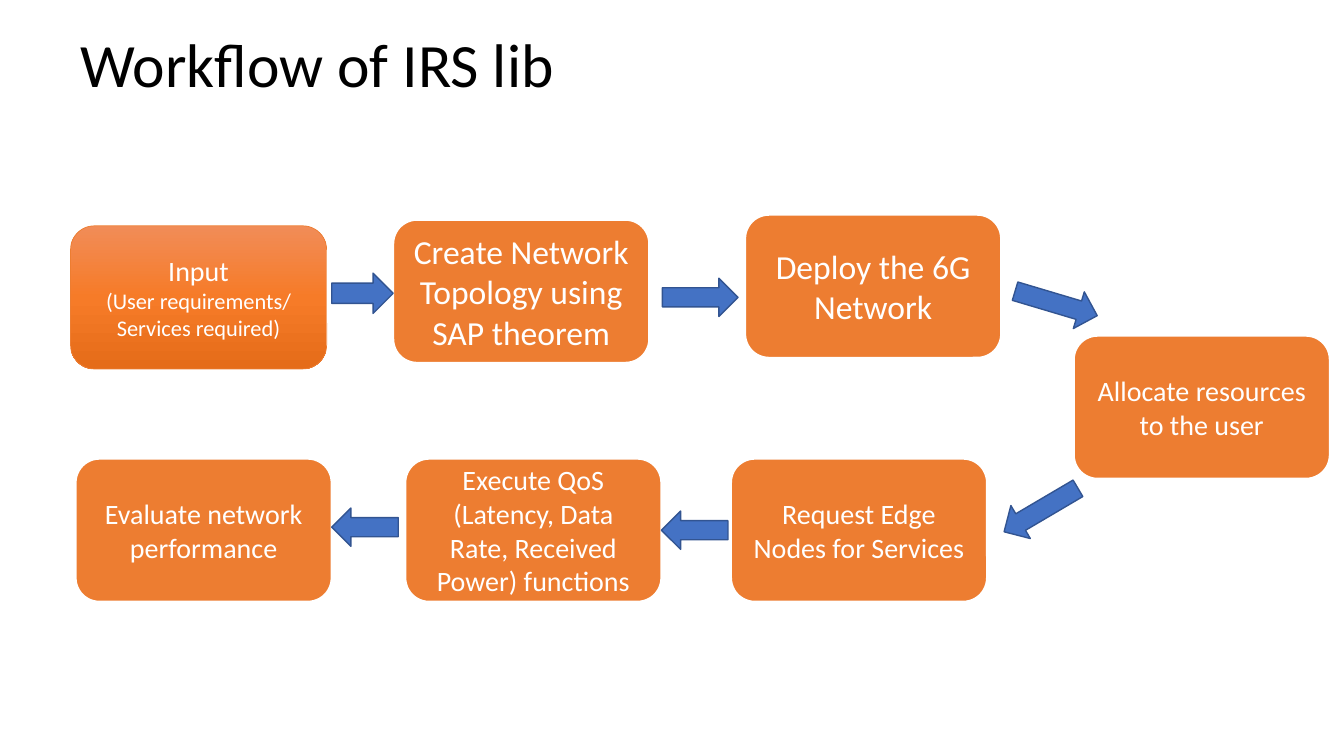
from copy import deepcopy
from dataclasses import dataclass

from pptx import Presentation
from pptx.dml.color import RGBColor
from pptx.enum.shapes import MSO_SHAPE
from pptx.enum.text import MSO_ANCHOR, PP_ALIGN
from pptx.oxml.ns import qn
from pptx.shapes.autoshape import Shape
from pptx.slide import Slide
from pptx.text.text import TextFrame
from pptx.util import Inches, Pt


@dataclass(frozen=True)
class Theme:
    font: str = "Calibri"
    title_color: str = "000000"
    step_text: str = "FFFFFF"
    step_fill: str = "ED7D31"
    step_line: str = "FFFFFF"
    input_line: str = "ED7D31"
    input_gradient: tuple[str, ...] = ("F18C57", "F67B28", "E56C19")
    arrow_fill: str = "4472C4"
    arrow_line: str = "325491"
    title_size: int = 44
    large: int = 24
    medium: int = 20
    small: int = 16


THEME = Theme()
STEP_WIDTH, STEP_HEIGHT = 2.54, 1.42
LOWER_ROW = 4.55


@dataclass(frozen=True)
class Step:
    left: float
    top: float
    lines: tuple[str, ...]
    sizes: tuple[int, ...]
    is_input: bool = False


@dataclass(frozen=True)
class Arrow:
    left: float
    top: float
    width: float
    height: float = 0.38
    rotation: float = 0


STEPS = (
    Step(0.7, 2.24, ("Input", "(User requirements/", "Services required)"),
         (THEME.medium, THEME.small, THEME.small), is_input=True),
    Step(3.9, 2.18, ("Create Network Topology using SAP theorem",), (THEME.large,)),
    Step(7.39, 2.13, ("Deploy the 6G Network",), (THEME.large,)),
    Step(10.65, 3.33, ("Allocate resources to the user",), (THEME.medium,)),
    Step(7.25, LOWER_ROW, ("Request Edge Nodes for Services",), (THEME.medium,)),
    Step(4.02, LOWER_ROW,
         ("Execute QoS", "(Latency, Data Rate, Received Power) functions"),
         (THEME.medium, THEME.medium)),
    Step(0.75, LOWER_ROW, ("Evaluate network performance",), (THEME.medium,)),
)

ARROWS = (
    Arrow(3.29, 2.71, 0.61, height=0.4),
    Arrow(6.57, 2.76, 0.75),
    Arrow(10.05, 2.82, 0.85, rotation=16.6),
    Arrow(9.9, 4.87, 0.85, rotation=149.5),
    Arrow(6.56, 5.07, 0.66, rotation=180),
    Arrow(3.29, 5.04, 0.66, rotation=180),
)


def write_text(frame: TextFrame, lines: tuple[str, ...], *, sizes: tuple[int, ...],
               color: str, align: PP_ALIGN = PP_ALIGN.LEFT,
               line_spacing: float = 1.0) -> None:
    frame.word_wrap = True
    frame.vertical_anchor = MSO_ANCHOR.MIDDLE
    for index, (line, size) in enumerate(zip(lines, sizes)):
        paragraph = frame.add_paragraph() if index else frame.paragraphs[0]
        paragraph.alignment = align
        paragraph.line_spacing = line_spacing
        run = paragraph.add_run()
        run.text = line
        run.font.name = THEME.font
        run.font.size = Pt(size)
        run.font.color.rgb = RGBColor.from_string(color)


def add_filled_shape(slide: Slide, kind: MSO_SHAPE, left: float, top: float,
                     width: float, height: float, *, fill: str, line: str,
                     line_width: float) -> Shape:
    shape = slide.shapes.add_shape(
        kind, Inches(left), Inches(top), Inches(width), Inches(height))
    shape.shadow.inherit = False
    shape.fill.solid()
    shape.fill.fore_color.rgb = RGBColor.from_string(fill)
    shape.line.color.rgb = RGBColor.from_string(line)
    shape.line.width = Pt(line_width)
    return shape


def apply_gradient(shape: Shape, colors: tuple[str, ...]) -> None:
    shape.fill.gradient()
    shape.fill.gradient_angle = 270
    stop_list = next(shape.element.iter(qn("a:gsLst")))
    while len(stop_list) < len(colors):
        stop_list.append(deepcopy(stop_list[-1]))
    for index, (stop, color) in enumerate(zip(shape.fill.gradient_stops, colors)):
        stop.position = index / (len(colors) - 1)
        stop.color.rgb = RGBColor.from_string(color)


def add_step(slide: Slide, step: Step) -> None:
    shape = add_filled_shape(
        slide, MSO_SHAPE.ROUNDED_RECTANGLE, step.left, step.top,
        STEP_WIDTH, STEP_HEIGHT, fill=THEME.step_fill,
        line=THEME.input_line if step.is_input else THEME.step_line,
        line_width=0.5 if step.is_input else 1.5)
    if step.is_input:
        apply_gradient(shape, THEME.input_gradient)
    write_text(shape.text_frame, step.lines, sizes=step.sizes,
               color=THEME.step_text, align=PP_ALIGN.CENTER)


def add_arrow(slide: Slide, arrow: Arrow) -> None:
    shape = add_filled_shape(
        slide, MSO_SHAPE.RIGHT_ARROW, arrow.left, arrow.top, arrow.width,
        arrow.height, fill=THEME.arrow_fill, line=THEME.arrow_line, line_width=1)
    shape.rotation = arrow.rotation


def main() -> None:
    presentation = Presentation()
    presentation.slide_width = Inches(13.33)
    presentation.slide_height = Inches(7.5)
    slide = presentation.slides.add_slide(presentation.slide_layouts[6])
    title = slide.shapes.add_textbox(
        Inches(0.7), Inches(-0.06), Inches(11.5), Inches(1.45))
    write_text(title.text_frame, ("Workflow of IRS lib",), sizes=(THEME.title_size,),
               color=THEME.title_color, line_spacing=0.9)
    for step in STEPS:
        add_step(slide, step)
    for arrow in ARROWS:
        add_arrow(slide, arrow)
    presentation.save("out.pptx")


if __name__ == "__main__":
    main()
